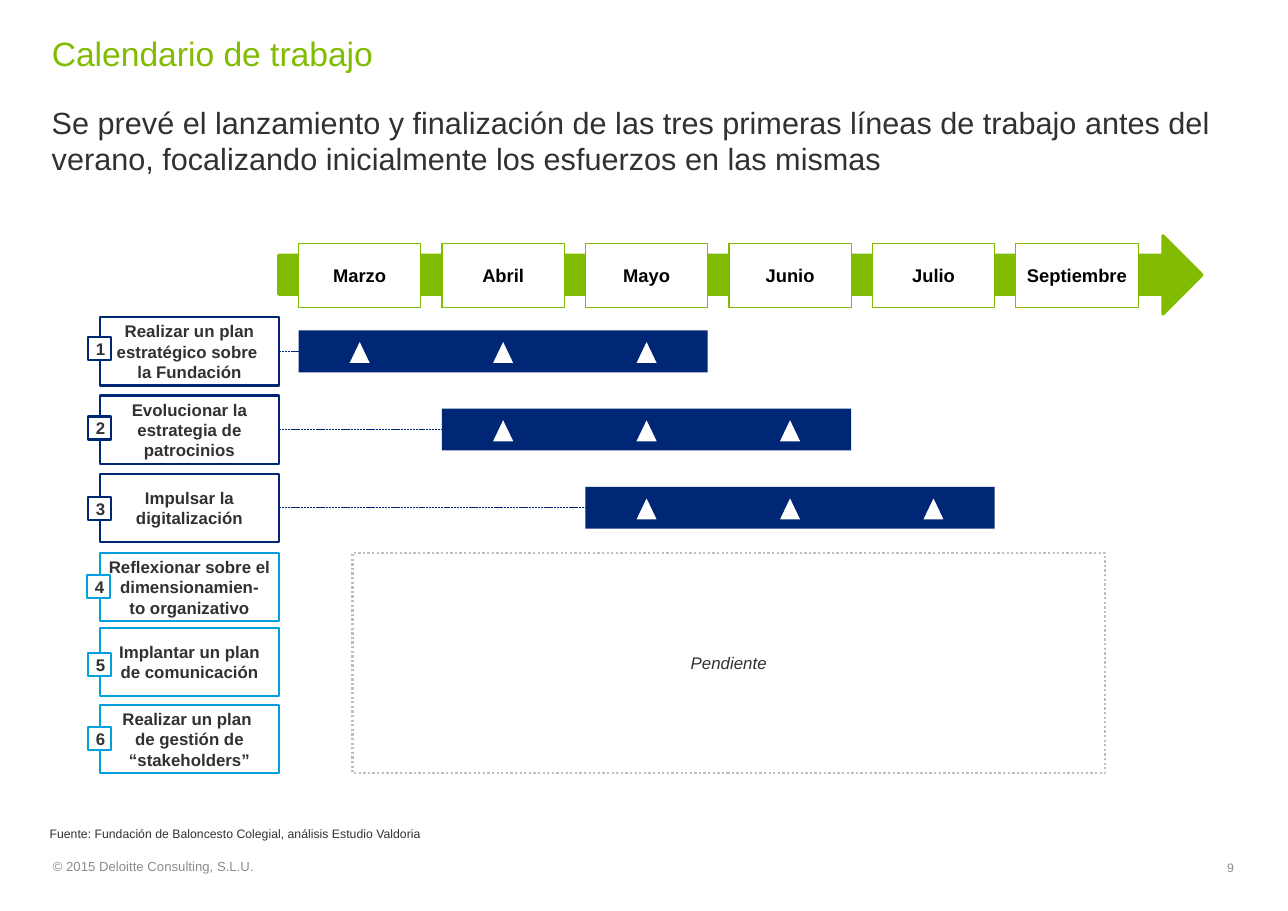
"""Build the work calendar slide with its month arrow and six lines of work."""
from copy import deepcopy

from pptx import Presentation
from pptx.dml.color import RGBColor
from pptx.enum.dml import MSO_LINE
from pptx.enum.shapes import MSO_CONNECTOR, MSO_SHAPE
from pptx.enum.text import MSO_ANCHOR, PP_ALIGN
from pptx.oxml.ns import qn
from pptx.oxml.xmlchemy import OxmlElement
from pptx.util import Inches, Pt

COLORS = {
    "green": "81BC00",
    "navy": "002776",
    "cyan": "00A1DE",
    "white": "FFFFFF",
    "black": "000000",
    "text": "313131",
    "footer": "8C8C8C",
    "border": "BFBFBF",
}
MONTHS = ["Marzo", "Abril", "Mayo", "Junio", "Julio", "Septiembre"]
MONTH_LEFT = 2.71
MONTH_PITCH = (9.22 - MONTH_LEFT) / 5
MONTH_WIDTH = 1.11
TASK_SIZE = (1.62, 0.62)
BADGE_SIZE = 0.21
BAR_HEIGHT = 0.38
BAR_MONTHS = 3
MARKER_SIZE = (0.23, 0.24)
TASKS = [
    ("Realizar un plan\nestratégico sobre \nla Fundación", 2.88, 0.8, 3.06, "navy"),
    ("Evolucionar la estrategia de patrocinios", 3.59, 0.8, 3.78, "navy"),
    ("Impulsar la digitalización", 4.3, 0.8, 4.51, "navy"),
    ("Reflexionar sobre el dimensionamien-\nto organizativo", 5.02, 0.79, 5.22, "cyan"),
    ("Implantar un plan de comunicación", 5.7, 0.8, 5.93, "cyan"),
    ("Realizar un plan \nde gestión de “stakeholders”", 6.4, 0.8, 6.6, "cyan"),
]
TASK_INSETS = (0.07, 0, 0.07, 0)


def rgb(name):
    """Return the named colour."""
    return RGBColor.from_string(COLORS[name])


def set_attributes(target, values):
    """Set each format value on the target."""
    for name, value in values.items():
        setattr(target, name, value)


def write_text(shape, text, size, color="text", insets=(0, 0, 0, 0), anchor=MSO_ANCHOR.TOP,
               align=PP_ALIGN.LEFT, **font):
    """Fill a shape with one formatted paragraph."""
    left, top, right, bottom = map(Inches, insets)
    set_attributes(shape.text_frame, {
        "word_wrap": True, "vertical_anchor": anchor, "margin_left": left,
        "margin_top": top, "margin_right": right, "margin_bottom": bottom,
    })
    paragraph = shape.text_frame.paragraphs[0]
    paragraph.text = text
    paragraph.alignment = align
    for run in paragraph.runs:
        set_attributes(run.font, {"name": "Arial", "size": Pt(size), **font})
        run.font.color.rgb = rgb(color)
    for line_break in paragraph._p.findall(qn("a:br")):
        line_break.append(deepcopy(paragraph.runs[0]._r.rPr))


def add_text(slide, box, text, size, **text_format):
    """Add a text box."""
    shape = slide.shapes.add_textbox(*map(Inches, box))
    write_text(shape, text, size, **text_format)


def add_block(slide, kind, box, fill, line=None, width=1.5, dash=None):
    """Add a filled preset shape with an optional outline."""
    shape = slide.shapes.add_shape(kind, *map(Inches, box))
    shape.shadow.inherit = False
    shape.fill.solid()
    shape.fill.fore_color.rgb = rgb(fill)
    if line:
        shape.line.color.rgb = rgb(line)
        set_attributes(shape.line, {"width": Pt(width), "dash_style": dash})
    else:
        shape.line.fill.background()
    return shape


def add_label(slide, box, text, line, size=11, insets=TASK_INSETS, width=1.5, dash=None, **font):
    """Add a white outlined rectangle with centred text."""
    shape = add_block(slide, MSO_SHAPE.RECTANGLE, box, "white", line, width, dash)
    write_text(shape, text, size, insets=insets, anchor=MSO_ANCHOR.MIDDLE,
               align=PP_ALIGN.CENTER, **font)
    return shape


def add_link(slide, task, bar):
    """Join a task to its bar with a dashed line."""
    connector = slide.shapes.add_connector(MSO_CONNECTOR.STRAIGHT, 0, 0, 0, 0)
    connector.begin_connect(task, 3)
    connector.end_connect(bar, 1)
    connector.line.color.rgb = rgb("navy")
    set_attributes(connector.line, {"width": Pt(0.5), "dash_style": MSO_LINE.SQUARE_DOT})
    connector._element.spPr.append(OxmlElement("a:effectLst"))


def add_months(slide):
    """Add the timeline arrow and its month boxes."""
    add_block(slide, MSO_SHAPE.RIGHT_ARROW, (2.53, 2.14, 8.38, 0.71), "green", "green", 2)
    for index, month in enumerate(MONTHS):
        box = (MONTH_LEFT + index * MONTH_PITCH, 2.21, MONTH_WIDTH, 0.58)
        add_label(slide, box, month, "green", size=12, insets=(0, 0.05, 0, 0.05),
                  width=0.75, color="black", bold=True)


def add_task(slide, number, text, top, badge_left, badge_top, color):
    """Add a task box with its number badge."""
    task = add_label(slide, (0.91, top, *TASK_SIZE), text, color, bold=True)
    add_label(slide, (badge_left, badge_top, BADGE_SIZE, BADGE_SIZE), str(number), color, bold=True)
    return task


def add_schedule(slide, task, task_top, first_month):
    """Add a task's bar, its link and one marker a month."""
    top = task_top + (TASK_SIZE[1] - BAR_HEIGHT) / 2
    left = MONTH_LEFT + first_month * MONTH_PITCH
    length = (BAR_MONTHS - 1) * MONTH_PITCH + MONTH_WIDTH
    bar = add_block(slide, MSO_SHAPE.RECTANGLE, (left, top, length, BAR_HEIGHT), "navy")
    add_link(slide, task, bar)
    for month in range(BAR_MONTHS):
        marker_left = left + month * MONTH_PITCH + (MONTH_WIDTH - MARKER_SIZE[0]) / 2
        box = (marker_left, top + 0.07, *MARKER_SIZE)
        add_block(slide, MSO_SHAPE.ISOSCELES_TRIANGLE, box, "white", "navy", 2)


def main():
    """Build and save the slide."""
    presentation = Presentation()
    set_attributes(presentation, {"slide_width": Inches(11.69), "slide_height": Inches(8.27)})
    slide = presentation.slides.add_slide(presentation.slide_layouts[6])

    add_text(slide, (10.19, 7.74, 1.01, 0.2), "9", 8, color="footer",
             anchor=MSO_ANCHOR.BOTTOM, align=PP_ALIGN.RIGHT)
    add_text(slide, (0.48, 7.74, 2, 0.2), "© 2015 Deloitte Consulting, S.L.U.", 8.6,
             color="footer", anchor=MSO_ANCHOR.BOTTOM)
    add_text(slide, (0.47, 0.3, 10.69, 0.37), "Calendario de trabajo", 22, color="green")
    add_text(slide, (0.47, 0.94, 11.03, 0.67),
             "Se prevé el lanzamiento y finalización de las tres primeras líneas de trabajo "
             "antes del verano, focalizando inicialmente los esfuerzos en las mismas", 20)
    add_text(slide, (0.45, 7.5, 10.79, 0.13),
             "Fuente: Fundación de Baloncesto Colegial, análisis Estudio Valdoria", 8,
             insets=(0, 0, 0.1, 0), anchor=MSO_ANCHOR.BOTTOM)

    add_months(slide)
    for index, (text, top, badge_left, badge_top, color) in enumerate(TASKS):
        task = add_task(slide, index + 1, text, top, badge_left, badge_top, color)
        if color == "navy":
            add_schedule(slide, task, top, index)
    add_label(slide, (3.2, 5.02, 6.83, 2), "Pendiente", "border",
              dash=MSO_LINE.ROUND_DOT, italic=True)

    presentation.save("out.pptx")


if __name__ == "__main__":
    main()
